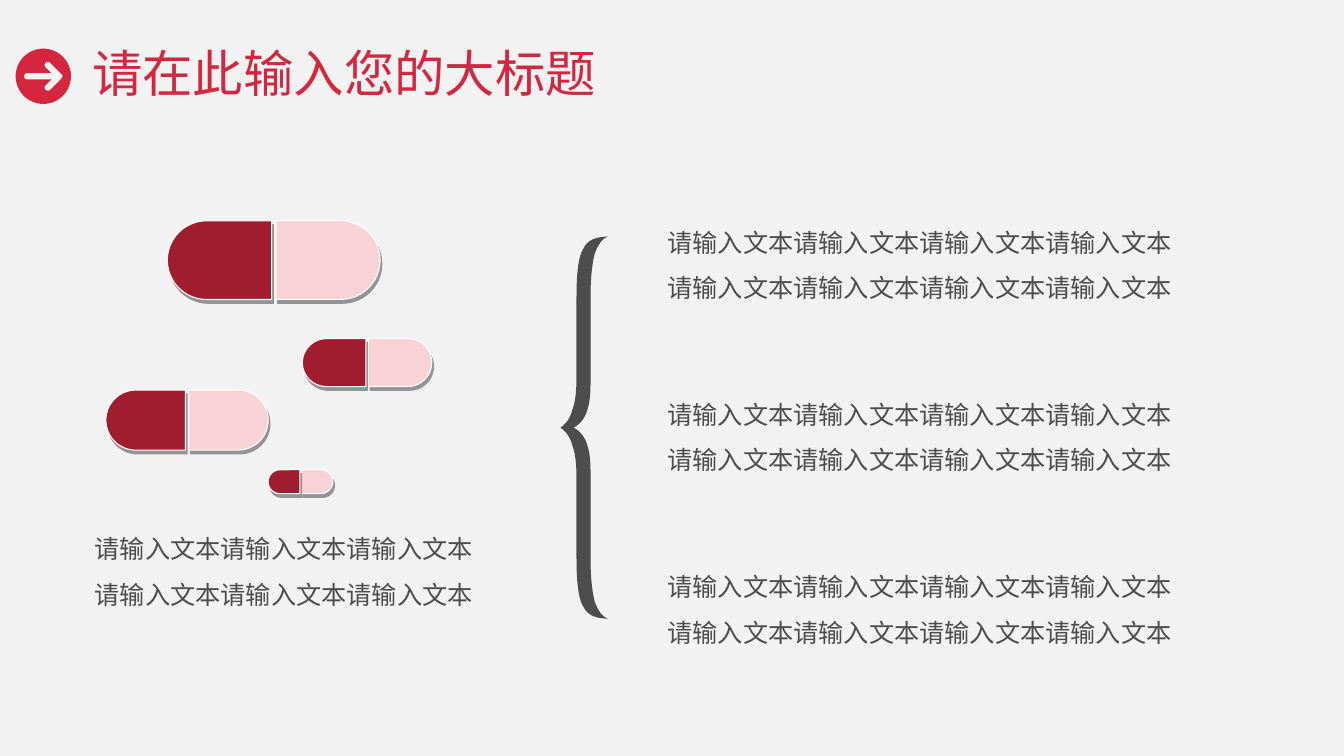
import math
from dataclasses import dataclass

import lxml.etree
import pptx
import pptx.dml.color
import pptx.enum.shapes
import pptx.enum.text
import pptx.oxml.ns
import pptx.util

Pt = pptx.util.Pt
qn = pptx.oxml.ns.qn


@dataclass(frozen=True)
class Theme:
    background: str = "F2F2F2"
    accent: str = "D4263F"
    dark_half: str = "9F1D2F"
    light_half: str = "F7D3D8"
    outline: str = "FFFFFF"
    shadow: str = "000000"
    text: str = "4D4D4D"
    font: str = "Noto Sans CJK SC"
    title_size: float = 36
    body_size: float = 18


THEME = Theme()
PHRASE = "请输入文本"

# Upper halves of outlines symmetric about y = 0.
# A pair is a line end; six numbers are a cubic curve: two controls and an end.
ARROW_HALF = [
    (-13.7, 0),
    (-13.7, -1.4, -12.9, -2.2, -11.5, -2.2),
    (5.8, -2.2),
    (1.5, -6.5),
    (0.7, -7.4, 0.7, -8.8, 1.5, -9.6),
    (2.4, -10.5, 4.1, -10.5, 5, -9.6),
    (12.9, -1.7),
    (13.4, -1.2, 13.7, -0.6, 13.7, 0),
]
BRACE_HALF = [
    (0, 0),
    (4.3, -2.9, 7.2, -7.2, 8.6, -13),
    (10.8, -18.7, 11.5, -26.6, 11.5, -36.7),
    (11.5, -93.6),
    (11.5, -110.9, 13, -123.1, 16.6, -128.2),
    (19.4, -133.9, 25.2, -136.4, 34, -136.4),
    (29.5, -135, 26.6, -130, 24.5, -124.2),
    (23, -118.4, 21.6, -108.4, 21.6, -96.8),
    (21.6, -41.4),
    (21.6, -29.2, 21.6, -19.4, 19.4, -13.3),
    (18, -7.6, 14.4, -2.5, 9.4, 0),
]


def rgb(value):
    return pptx.dml.color.RGBColor.from_string(value)


def mirrored_outline(half, steps=12):
    """Turn a half outline into the points of the whole, closed outline."""
    points = [half[0]]
    for segment in half[1:]:
        if len(segment) == 2:
            points.append(segment)
            continue
        corners = [points[-1], segment[:2], segment[2:4], segment[4:]]
        for step in range(1, steps + 1):
            t = step / steps
            weights = [math.comb(3, i) * t**i * (1 - t) ** (3 - i) for i in range(4)]
            points.append(tuple(
                sum(weight * corner[axis] for weight, corner in zip(weights, corners))
                for axis in (0, 1)
            ))
    return points + [(x, -y) for x, y in reversed(points)]


def add_outline(slide, contours, x, y, color):
    """Draw closed contours, given relative to (x, y), as one filled shape."""
    placed = [[(Pt(x + dx), Pt(y + dy)) for dx, dy in contour] for contour in contours]
    builder = slide.shapes.build_freeform(*placed[0][0])
    for index, contour in enumerate(placed):
        if index:
            builder.move_to(*contour[0])
        builder.add_line_segments(contour[1:], close=True)
    shape = builder.convert_to_shape()
    shape.shadow.inherit = False
    shape.fill.solid()
    shape.fill.fore_color.rgb = rgb(color)
    shape.line.fill.background()


def add_text(slide, box, text, size, color, alignment, line_spacing):
    shape = slide.shapes.add_textbox(*map(Pt, box))
    frame = shape.text_frame
    frame.word_wrap = True
    frame.vertical_anchor = pptx.enum.text.MSO_ANCHOR.MIDDLE
    paragraph = frame.paragraphs[0]
    paragraph.alignment = alignment
    paragraph.line_spacing = line_spacing
    run = paragraph.add_run()
    run.text = text
    run.font.size = Pt(size)
    run.font.name = THEME.font
    run.font.color.rgb = rgb(color)
    east_asian = lxml.etree.SubElement(run.font._element, qn("a:ea"))
    east_asian.set("typeface", THEME.font)


def add_body(slide, box, repeats):
    add_text(slide, box, PHRASE * repeats, THEME.body_size, THEME.text,
             pptx.enum.text.PP_ALIGN.CENTER, 1.5)


def add_drop_shadow(shape):
    shape.shadow.inherit = False
    effects = shape._element.spPr.find(qn("a:effectLst"))
    shadow = lxml.etree.SubElement(
        effects, qn("a:outerShdw"), blurRad="0", dist=str(Pt(3)),
        dir=str(65 * 60000), algn="tl", rotWithShape="0")
    color = lxml.etree.SubElement(shadow, qn("a:srgbClr"), val=THEME.shadow)
    lxml.etree.SubElement(color, qn("a:alpha"), val="38000")


def add_capsule(slide, left, top, width):
    height = width * 0.37
    half_width = width * 0.49
    group = slide.shapes.add_group_shape()
    halves = [
        (left + width - half_width, 90, THEME.light_half),
        (left, 270, THEME.dark_half),
    ]
    for half_left, rotation, color in halves:
        inset = (half_width - height) / 2
        half = group.shapes.add_shape(
            pptx.enum.shapes.MSO_SHAPE.ROUND_2_SAME_RECTANGLE,
            Pt(half_left + inset), Pt(top - inset), Pt(height), Pt(half_width))
        half.adjustments[0] = 0.5
        half.rotation = rotation
        half.fill.solid()
        half.fill.fore_color.rgb = rgb(color)
        half.line.color.rgb = rgb(THEME.outline)
        half.line.width = Pt(0.75)
        add_drop_shadow(half)


def add_header(slide, left, top, width, height):
    radius = 19.75
    circle = [
        (radius * math.cos(math.tau * i / 72), radius * math.sin(math.tau * i / 72))
        for i in range(72)
    ]
    add_outline(slide, [circle, mirrored_outline(ARROW_HALF)],
                left + radius, top + height / 2, THEME.accent)
    title_offset = 47.6
    add_text(slide, (left + title_offset, top, width - title_offset, height),
             "请在此输入您的大标题", THEME.title_size, THEME.accent,
             pptx.enum.text.PP_ALIGN.LEFT, 0.9)


def add_capsule_panel(slide, left, top):
    """Place four capsules and, below them, their caption."""
    capsules = [
        (65.5, 0, 152), (162, 84.2, 92.4), (21.6, 120.9, 116), (137.5, 177.8, 46.2),
    ]
    for x, y, width in capsules:
        add_capsule(slide, left + x, top + y, width)
    add_body(slide, (left, top + 205.2, 297.4, 80), 6)


def add_brace_panel(slide, left, middle):
    """Place the brace and the three texts it embraces, centred on middle."""
    add_outline(slide, [mirrored_outline(BRACE_HALF)], left, middle, THEME.text)
    text_height, pitch = 85, 123.1
    for row in (-1, 0, 1):
        top = middle + 1.2 + row * pitch - text_height / 2
        add_body(slide, (left + 68.5, top, 376, text_height), 8)


def main():
    presentation = pptx.Presentation()
    presentation.slide_width = Pt(960)
    presentation.slide_height = Pt(540)
    slide = presentation.slides.add_slide(presentation.slide_layouts[6])
    slide.background.fill.solid()
    slide.background.fill.fore_color.rgb = rgb(THEME.background)
    add_header(slide, 11.2, 21, 838, 67)
    add_capsule_panel(slide, 54, 157.7)
    add_brace_panel(slide, 400.3, 305.5)
    presentation.save("out.pptx")


if __name__ == "__main__":
    main()
